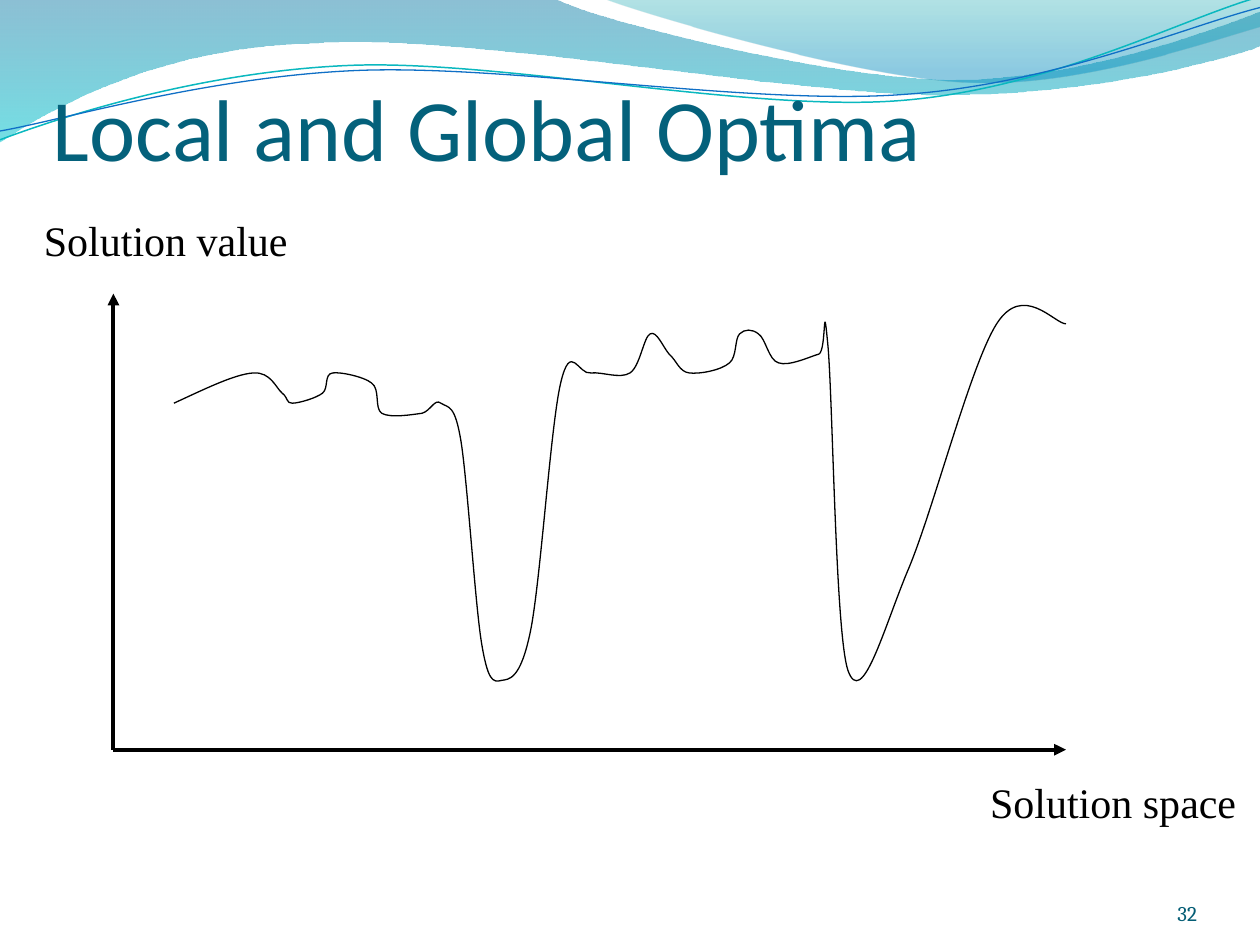
from dataclasses import dataclass

from pptx import Presentation
from pptx import util as u
from pptx.dml.color import RGBColor
from pptx.enum import shapes, text
from pptx.oxml import ns, xmlchemy

COLS, ROWS = 10, 7.5  # slide grid, one inch per cell


@dataclass(frozen=True)
class Theme:
    title: str = "04617B"
    number: str = "045D75"
    ink: str = "000000"
    teal: str = "0AB8BF"
    blue: str = "0F6FC6"
    # gradient stops: position, colour, opacity in percent
    wide_wave: tuple = ((0, "0074A1", 45), (1, "00C6CF", 55))
    right_wave: tuple = ((0, "00A1A9", 30), (0.8, "008BBF", 45))
    title_pt: float = 50
    label_pt: float = 24
    number_pt: float = 12


@dataclass(frozen=True)
class Box:
    x: float
    y: float
    w: float
    h: float

    def point(self, x, y):
        return u.Inches(self.x + x), u.Inches(self.y + y)

    def frame(self):
        return [u.Inches(v) for v in (self.x, self.y, self.w, self.h)]

    def inner(self, x, y, w, h):
        return Box(self.x + x, self.y + y, w, h)


THEME = Theme()

# Each outline is a start point, then lines (x, y) and curves (x1, y1, x2, y2, x, y).
WIDE_WAVE = [
    (0, 0), (4.4, -0.01), (4.76, 0.17, 6.64, 0.63, 7.58, 0.63),
    (8.53, 0.63, 9.58, 0.26, 10, 0.09), (10.01, 0.36),
    (9.83, 0.44, 8.7, 0.76, 7.46, 0.75), (6.22, 0.75, 3.82, 0.28, 2.57, 0.34),
    (1.29, 0.36, 0.46, 0.83, -0.01, 1.13)]
RIGHT_WAVE = [
    (4.79, -0.01), (5.09, 0.11, 6.82, 0.62, 7.69, 0.65),
    (8.56, 0.69, 9.61, 0.32, 10, 0.21), (10, 0)]
TEAL_LINE = [
    (0, 1.11), (0.48, 0.93, 1.58, 0.57, 2.77, 0.52),
    (3.95, 0.47, 5.93, 0.89, 7.13, 0.8), (8.33, 0.71, 9.38, 0.15, 9.98, -0.02)]
BLUE_LINE = [
    (0, 1.04), (0.47, 0.96, 1.64, 0.61, 2.83, 0.56),
    (4.03, 0.51, 5.97, 0.84, 7.17, 0.75), (8.36, 0.67, 9.41, 0.21, 10, 0.06)]
VALUE_CURVE = [
    (1.38, 2.2), (1.62, 2.09, 1.86, 1.97, 2.01, 1.96),
    (2.15, 1.95, 2.19, 2.08, 2.24, 2.12), (2.29, 2.16, 2.27, 2.2, 2.32, 2.2),
    (2.37, 2.2, 2.51, 2.16, 2.56, 2.12), (2.61, 2.08, 2.57, 1.97, 2.64, 1.96),
    (2.7, 1.95, 2.89, 1.99, 2.95, 2.04), (3.02, 2.09, 2.97, 2.24, 3.03, 2.28),
    (3.1, 2.32, 3.27, 2.29, 3.35, 2.28), (3.42, 2.26, 3.45, 2.16, 3.5, 2.2),
    (3.56, 2.24, 3.61, 2.2, 3.66, 2.51), (3.71, 2.83, 3.77, 3.77, 3.82, 4.09),
    (3.87, 4.4, 3.91, 4.42, 3.98, 4.4), (4.04, 4.39, 4.13, 4.4, 4.21, 4.01),
    (4.29, 3.62, 4.37, 2.38, 4.45, 2.04), (4.53, 1.7, 4.59, 1.98, 4.69, 1.96),
    (4.78, 1.95, 4.92, 2.01, 5, 1.96), (5.08, 1.91, 5.11, 1.67, 5.16, 1.65),
    (5.21, 1.62, 5.26, 1.75, 5.31, 1.81), (5.37, 1.86, 5.39, 1.95, 5.47, 1.96),
    (5.55, 1.97, 5.72, 1.94, 5.79, 1.88), (5.85, 1.83, 5.83, 1.69, 5.87, 1.65),
    (5.91, 1.61, 5.97, 1.61, 6.02, 1.65), (6.08, 1.69, 6.1, 1.86, 6.18, 1.88),
    (6.26, 1.91, 6.43, 1.83, 6.5, 1.81), (6.56, 1.78, 6.53, 1.31, 6.57, 1.73),
    (6.61, 2.15, 6.63, 4.02, 6.73, 4.32), (6.84, 4.63, 7.01, 4, 7.2, 3.54),
    (7.4, 3.08, 7.7, 1.9, 7.91, 1.57), (8.12, 1.24, 8.37, 1.57, 8.46, 1.57)]


def add_xml(parent, tag, **attrs):
    el = xmlchemy.OxmlElement(tag)
    for name, value in attrs.items():
        el.set(name, str(value))
    parent.append(el)
    return el


def set_line(line, color, width):
    line.color.rgb = RGBColor.from_string(color)
    line.width = u.Pt(width)


def write_text(sp, content, *, font, size, color, align=text.PP_ALIGN.LEFT,
               anchor=text.MSO_ANCHOR.TOP, margins=None,
               fit=text.MSO_AUTO_SIZE.NONE):
    tf = sp.text_frame
    tf.word_wrap, tf.auto_size, tf.vertical_anchor = True, fit, anchor
    if margins:
        (tf.margin_left, tf.margin_top,
         tf.margin_right, tf.margin_bottom) = map(u.Inches, margins)
    p = tf.paragraphs[0]
    p.alignment = align
    r = p.add_run()
    r.text = content
    r.font.name, r.font.size = font, u.Pt(size)
    r.font.color.rgb = RGBColor.from_string(color)


def add_curve(s, box, outline, *, closed=False):
    """Build the outline through all its points, then join triples into curves."""
    start, *segments = outline
    points = [box.point(*seg[i:i + 2]) for seg in segments
              for i in range(0, len(seg), 2)]
    builder = s.shapes.build_freeform(*box.point(*start), scale=1)
    builder.add_line_segments(points, close=closed)
    sp = builder.convert_to_shape()
    steps = iter(list(sp._element.iter(ns.qn("a:lnTo"))))
    for seg in segments:
        first = next(steps)
        if len(seg) == 6:
            first.tag = ns.qn("a:cubicBezTo")
            for step in (next(steps), next(steps)):
                first.append(step[0])
                step.getparent().remove(step)
    sp.shadow.inherit = False
    return sp


def add_stroke(s, box, outline, color, width):
    sp = add_curve(s, box, outline)
    sp.fill.background()
    set_line(sp.line, color, width)


def add_waves(s, box):
    # Translucent bands
    for outline, stops in ((WIDE_WAVE, THEME.wide_wave),
                           (RIGHT_WAVE, THEME.right_wave)):
        sp = add_curve(s, box, outline, closed=True)
        sp.line.fill.background()
        sp.fill.gradient()
        sp.fill.gradient_angle = 270
        for stop, (position, color, opacity) in zip(sp.fill.gradient_stops, stops):
            stop.position = position
            stop.color.rgb = RGBColor.from_string(color)
            add_xml(stop._gs[0], "a:alpha", val=opacity * 1000)
    # Thin lines
    add_stroke(s, box, TEAL_LINE, THEME.teal, 0.85)
    add_stroke(s, box, BLUE_LINE, THEME.blue, 0.75)


def add_title(s, box):
    sp = s.shapes.title
    sp.left, sp.top, sp.width, sp.height = box.frame()
    write_text(sp, "Local and Global Optima", font="Calibri", size=THEME.title_pt,
               color=THEME.title, anchor=text.MSO_ANCHOR.BOTTOM,
               margins=(0, 0.05, 0, 0))
    s.shapes._spTree.append(sp._element)  # in front of the waves


def add_landscape(s, box):
    # Axes from a shared origin
    origin = box.point(0.9, 4.95)
    for end in ((0.9, 1.33), (8.46, 4.95)):
        axis = s.shapes.add_connector(shapes.MSO_CONNECTOR.STRAIGHT,
                                      *origin, *box.point(*end))
        set_line(axis.line, THEME.ink, 2.25)
        add_xml(axis.line._get_or_add_ln(), "a:tailEnd", type="triangle")
        add_xml(axis._element.spPr, "a:effectLst")
    # Objective function
    add_stroke(s, box, VALUE_CURVE, THEME.ink, 0.75)
    # Axis labels, wide enough for one line each
    for label, x, y in (("Solution value", 0.25, 0.65),
                        ("Solution space", 7.76, 5.11)):
        sp = s.shapes.add_textbox(*box.inner(x, y, 2.2, 0.5).frame())
        write_text(sp, label, font="Times New Roman", size=THEME.label_pt,
                   color=THEME.ink, fit=text.MSO_AUTO_SIZE.SHAPE_TO_FIT_TEXT)


def add_number(s, box):
    sp = s.shapes.add_textbox(*box.frame())
    write_text(sp, "32", font="Cambria", size=THEME.number_pt, color=THEME.number,
               align=text.PP_ALIGN.RIGHT, anchor=text.MSO_ANCHOR.BOTTOM,
               margins=(0, 0, 0, 0))


def main():
    prs = Presentation()
    prs.slide_width, prs.slide_height = u.Inches(COLS), u.Inches(ROWS)
    s = prs.slides.add_slide(prs.slide_layouts[5])
    add_waves(s, Box(0, 0, COLS, 1.2))
    add_title(s, Box(0.42, 0.17, 9, 1.25))
    add_landscape(s, Box(0, 1, COLS, 5.7))
    add_number(s, Box(8.67, 6.95, 0.83, 0.4))
    prs.save("out.pptx")


if __name__ == "__main__":
    main()
